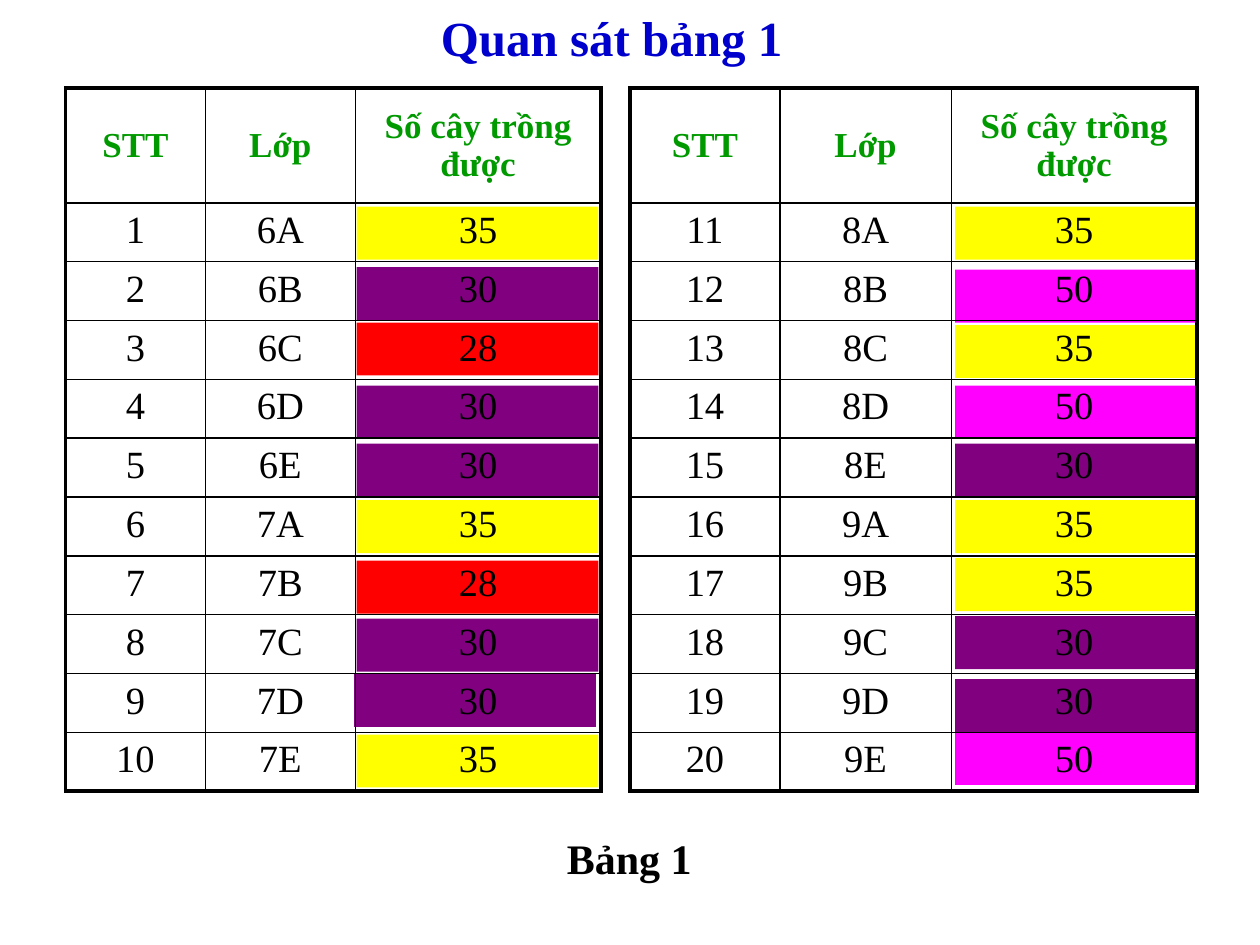
from lxml import etree
from pptx import Presentation
from pptx.dml.color import RGBColor
from pptx.enum.shapes import MSO_SHAPE
from pptx.enum.text import MSO_ANCHOR, PP_ALIGN
from pptx.oxml.ns import qn
from pptx.util import Inches, Pt

RECT = MSO_SHAPE.RECTANGLE
CENTER, LEFT = PP_ALIGN.CENTER, PP_ALIGN.LEFT
TOP, MIDDLE = MSO_ANCHOR.TOP, MSO_ANCHOR.MIDDLE
COLORS = {"title": "0000CC", "header": "009900", "text": "000000", "border": "000000"}
VALUE_COLORS = {"28": "FF0000", "30": "800080", "35": "FFFF00", "50": "FF00FF"}
HEADERS = ["STT", "Lớp", "Số cây trồng được"]
TABLES = [
    {
        "x": 5, "cols": [1.19, 1.36, 1.95], "first": 11, "grades": "89",
        "values": "35 50 35 50 30 35 35 30 30 50".split(),
        "bar_x": [7.58] * 10,
        "bar_y": [1.64, 2.14, 2.58, 3.06, 3.52, 3.97, 4.43, 4.89, 5.39, 5.81],
    },
    {
        "x": 0.52, "cols": [1.11, 1.19, 1.95], "first": 1, "grades": "67",
        "values": "35 30 28 30 30 35 28 30 30 35".split(),
        "bar_x": [2.83] * 8 + [2.81, 2.83],
        "bar_y": [1.64, 2.12, 2.56, 3.06, 3.52, 3.97, 4.45, 4.91, 5.35, 5.83],
    },
]


def write(tf, text, size, color, bold, align):
    p = tf.paragraphs[0]
    p.text = text
    p.alignment = align
    p.font.name = "Times New Roman"
    p.font.size = Pt(size)
    p.font.bold = bold
    p.font.color.rgb = RGBColor.from_string(COLORS[color])
    return p


def add_border(cell, side, width):
    ln = etree.SubElement(cell._tc.get_or_add_tcPr(), qn(f"a:ln{side}"), w=str(Pt(width)))
    fill = etree.SubElement(ln, qn("a:solidFill"))
    etree.SubElement(fill, qn("a:srgbClr"), val=COLORS["border"])


prs = Presentation()
prs.slide_width, prs.slide_height = Inches(10), Inches(7.5)
s = prs.slides.add_slide(prs.slide_layouts[6])

caption = s.shapes.add_textbox(Inches(3.83), Inches(6.56), Inches(2.33), Inches(0.5))
caption.text_frame.word_wrap = True
write(caption.text_frame, "Bảng 1", 24, "text", True, CENTER)

for t in TABLES:
    for value, x, y in zip(t["values"], t["bar_x"], t["bar_y"]):
        sp = s.shapes.add_shape(RECT, Inches(x), Inches(y), Inches(1.92), Inches(0.42))
        sp.shadow.inherit = False
        sp.fill.solid()
        sp.fill.fore_color.rgb = RGBColor.from_string(VALUE_COLORS[value])
        sp.line.fill.background()

for t in TABLES:
    classes = [grade + letter for grade in t["grades"] for letter in "ABCDE"]
    rows = [HEADERS] + [
        [str(t["first"] + i), name, value]
        for i, (name, value) in enumerate(zip(classes, t["values"]))
    ]
    last_row, last_col = len(rows) - 1, len(HEADERS) - 1
    table = s.shapes.add_table(
        len(rows), len(HEADERS), Inches(t["x"]), Inches(0.7), Inches(sum(t["cols"])), Inches(5.58)
    ).table
    table.first_row = False
    table.horz_banding = False
    for col, width in zip(table.columns, t["cols"]):
        col.width = Inches(width)
    for r, row in enumerate(rows):
        header = r == 0
        table.rows[r].height = Inches(0.91 if header else 0.467)
        for c, text in enumerate(row):
            cell = table.cell(r, c)
            cell.vertical_anchor = MIDDLE if header else TOP
            size, color = (20, "header") if header else (22, "text")
            write(cell.text_frame, text, size, color, header, CENTER)
            outer = {"L": c == 0, "R": c == last_col, "T": header, "B": r == last_row}
            for side, is_outer in outer.items():
                add_border(cell, side, 2.25 if is_outer else 1)
            cell.fill.background()

title = s.shapes.add_textbox(Inches(3.2), Inches(0.06), Inches(3.6), Inches(0.58))
tf = title.text_frame
tf.word_wrap = True
tf.margin_left = Inches(0.3)
p = write(tf, "Quan sát bảng 1", 28, "title", True, LEFT)
p.line_spacing = 0.9

prs.save("out.pptx")
